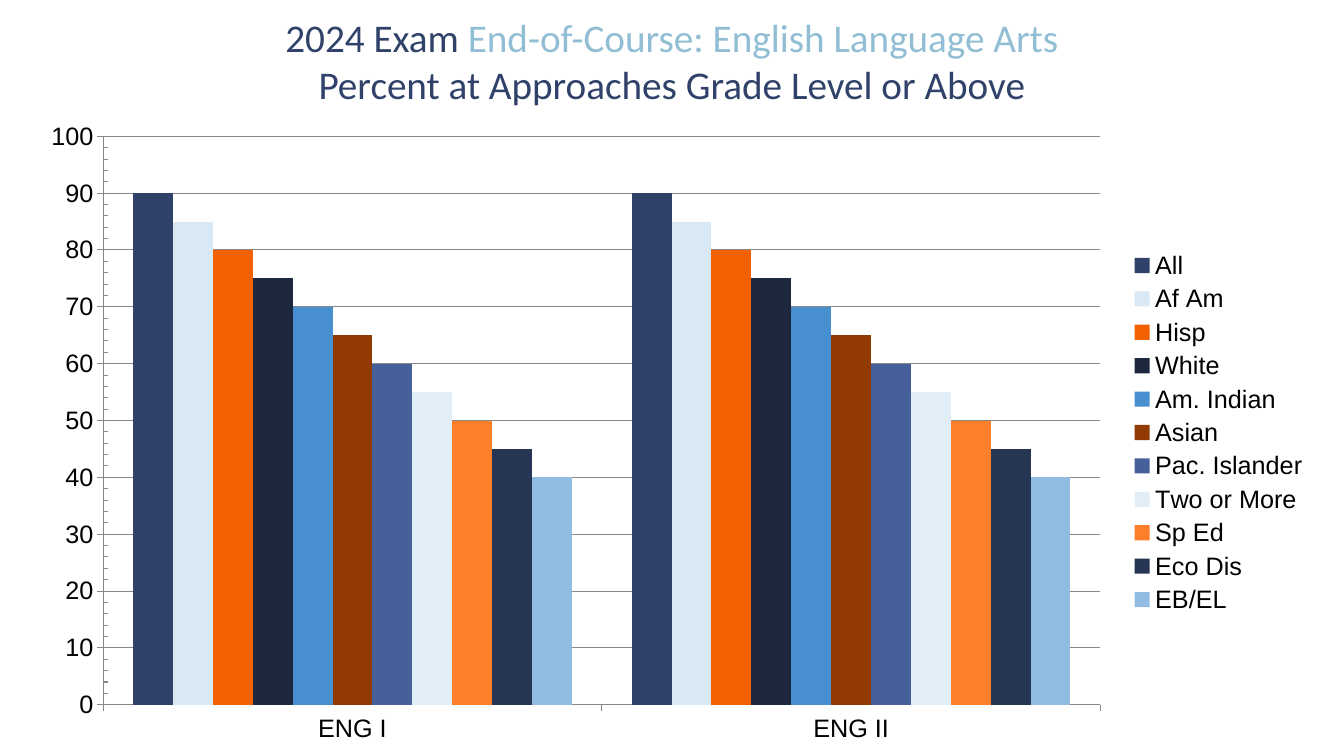
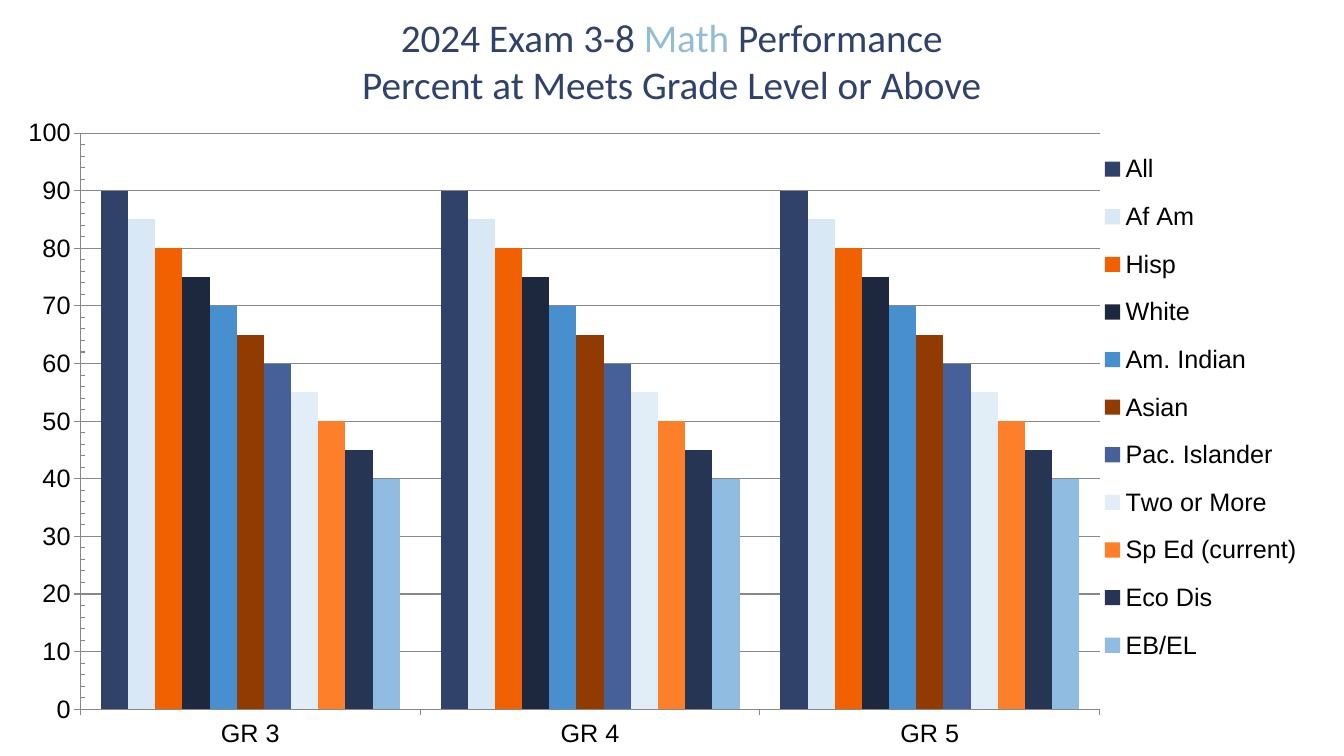
from dataclasses import dataclass

from lxml import etree
from pptx import Presentation
from pptx import util as u
from pptx.chart import data as chart_data
from pptx.dml import color as dml
from pptx.enum import chart as charts, text
from pptx.oxml import ns


@dataclass(frozen=True)
class Theme:
    navy: str = "304269"
    accent: str = "91BED4"
    black: str = "000000"
    grid: str = "888888"
    title_font: str = "Calibri"
    chart_font: str = "Arial"
    title_size: int = 28
    chart_size: int = 18
    line_width: float = 0.75
    bars: tuple = ("304269", "D9E8F5", "F26101", "1D283F", "478FCF", "913A01",
                   "46619A", "E1EDF7", "FE7F2A", "263554", "90BCE2")


def rgb(value):
    return dml.RGBColor.from_string(value)


def set_layout(parent, index, area, inner=False):
    """Give a plot area or legend a fixed place, in percent of the chart."""
    for old in parent.findall(ns.qn("c:layout")):
        parent.remove(old)
    layout = etree.Element(ns.qn("c:layout"))
    manual = etree.SubElement(layout, ns.qn("c:manualLayout"))
    settings = [("layoutTarget", "inner")] if inner else []
    settings += [("xMode", "edge"), ("yMode", "edge")]
    settings += [(name, str(percent / 100)) for name, percent in zip("xywh", area)]
    for name, value in settings:
        etree.SubElement(manual, ns.qn("c:" + name)).set("val", value)
    parent.insert(index, layout)


class ReportDeck:
    def __init__(self, theme):
        self.theme = theme
        self.deck = Presentation()
        self.deck.slide_width = u.Cm(33.87)
        self.deck.slide_height = u.Cm(19.05)
        self.slide = None

    def add_slide(self):
        self.slide = self.deck.slides.add_slide(self.deck.slide_layouts[6])

    def add_title(self, lines):
        """Each line is a list of (wording, colour) pairs."""
        box = self.slide.shapes.add_textbox(u.Cm(4.23), u.Cm(0.26), u.Cm(25.4), u.Cm(2.54))
        frame = box.text_frame
        frame.word_wrap = True
        frame.vertical_anchor = text.MSO_ANCHOR.MIDDLE
        for number, line in enumerate(lines):
            para = frame.add_paragraph() if number else frame.paragraphs[0]
            para.alignment = text.PP_ALIGN.CENTER
            for wording, color in line:
                span = para.add_run()
                span.text = wording
                span.font.name = self.theme.title_font
                span.font.size = u.Pt(self.theme.title_size)
                span.font.color.rgb = rgb(color)

    def style_font(self, font):
        font.name = self.theme.chart_font
        font.size = u.Pt(self.theme.chart_size)
        font.color.rgb = rgb(self.theme.black)

    def style_line(self, line):
        line.color.rgb = rgb(self.theme.grid)
        line.width = u.Pt(self.theme.line_width)

    def add_column_chart(self, left, categories, groups, plot_area=None, legend_area=None):
        """Groups maps each student group to its percent in every category."""
        data = chart_data.CategoryChartData()
        data.categories = categories
        for name, percent in groups.items():
            data.add_series(name, [percent] * len(categories))
        chart = self.slide.shapes.add_chart(
            charts.XL_CHART_TYPE.COLUMN_CLUSTERED,
            u.Cm(left), u.Cm(2.75), u.Cm(32.6), u.Cm(16.3), data).chart
        chart.has_title = False
        self.style_font(chart.font)

        # Columns
        plot = chart.plots[0]
        plot.gap_width = 150
        plot.overlap = 0
        plot.vary_by_categories = False
        for series, color in zip(plot.series, self.theme.bars):
            series.format.fill.solid()
            series.format.fill.fore_color.rgb = rgb(color)
            series.invert_if_negative = False

        # Axes
        for axis in (chart.category_axis, chart.value_axis):
            axis.major_tick_mark = charts.XL_TICK_MARK.OUTSIDE
            self.style_font(axis.tick_labels.font)
            self.style_line(axis.format.line)
        values = chart.value_axis
        values.minimum_scale, values.maximum_scale = 0, 100
        values.major_unit, values.minor_unit = 10, 2
        values.minor_tick_mark = charts.XL_TICK_MARK.INSIDE
        values.has_major_gridlines = True
        self.style_line(values.major_gridlines.format.line)

        # Legend
        chart.has_legend = True
        legend = chart.legend
        legend.position = charts.XL_LEGEND_POSITION.RIGHT
        legend.include_in_layout = legend_area is not None
        self.style_font(legend.font)

        # Fixed places
        if plot_area:
            set_layout(chart._chartSpace.chart.plotArea, 0, plot_area, inner=True)
        if legend_area:
            set_layout(legend._element, 1, legend_area)

    def save(self):
        self.deck.save("out.pptx")


def student_groups(special_education):
    names = ("All", "Af Am", "Hisp", "White", "Am. Indian", "Asian", "Pac. Islander",
             "Two or More", special_education, "Eco Dis", "EB/EL")
    return {name: 90 - 5 * step for step, name in enumerate(names)}


def main():
    theme = Theme()
    report = ReportDeck(theme)

    # English end-of-course results
    report.add_slide()
    report.add_column_chart(0.64, ["ENG I", "ENG II"], student_groups("Sp Ed"))
    report.add_title([
        [("2024 Exam ", theme.navy), ("End-of-Course: English Language Arts", theme.accent)],
        [("Percent at Approaches Grade Level or Above", theme.navy)],
    ])

    # Math results by grade
    report.add_slide()
    report.add_column_chart(
        0.43, ["GR 3", "GR 4", "GR 5"], student_groups("Sp Ed (current)"),
        plot_area=(4.9, 3.7, 78.8, 89.1), legend_area=(83.5, 4.1, 16, 84))
    report.add_title([
        [("2024 Exam 3-8 ", theme.navy), ("Math ", theme.accent), ("Performance", theme.navy)],
        [("Percent at Meets Grade Level or Above", theme.navy)],
    ])

    report.save()


if __name__ == "__main__":
    main()
